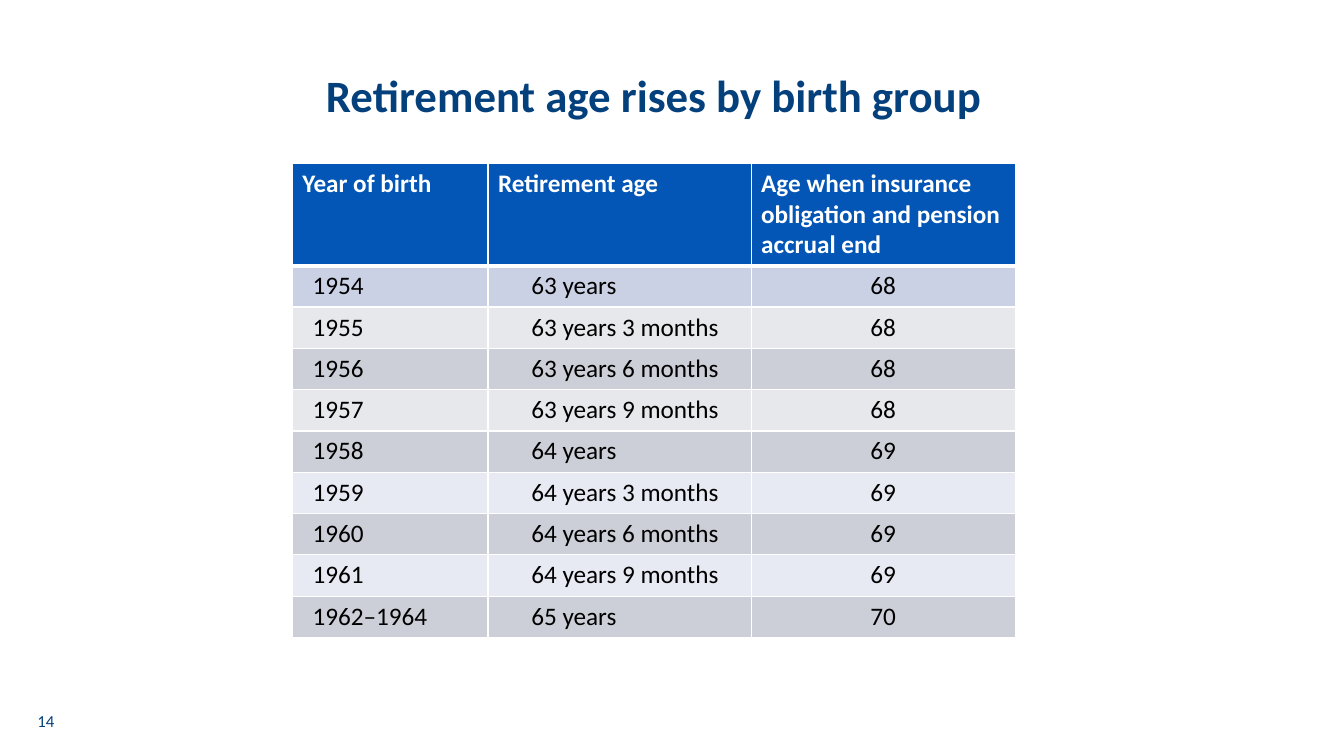
from lxml import etree
from pptx import Presentation
from pptx import util as u
from pptx.dml import color
from pptx.enum import text
from pptx.oxml import ns

COLORS = {
    "navy": "03407C", "header": "0356B5", "white": "FFFFFF", "black": "000000",
    "blue": "CBD1E5", "light": "E7E8EC", "gray": "CCCFD7", "pale": "E7E9F3",
}
LEFT, CENTER = text.PP_ALIGN.LEFT, text.PP_ALIGN.CENTER

HEADINGS = ["Year of birth", "Retirement age",
            "Age when insurance obligation and pension accrual end"]
BIRTH_GROUPS = [
    ("1954", "63 years", "68", "blue"),
    ("1955", "63 years 3 months", "68", "light"),
    ("1956", "63 years 6 months", "68", "gray"),
    ("1957", "63 years 9 months", "68", "light"),
    ("1958", "64 years", "69", "gray"),
    ("1959", "64 years 3 months", "69", "pale"),
    ("1960", "64 years 6 months", "69", "gray"),
    ("1961", "64 years 9 months", "69", "pale"),
    ("1962–1964", "65 years", "70", "gray"),
]
COLUMN_WIDTHS = [1.94, 2.61, 2.62]
# Left inset, right inset and alignment of each body column
BODY_LAYOUT = [(0.2, 0.1, LEFT), (0.43, 0.1, LEFT), (0.08, 0.08, CENTER)]
HEADER_LAYOUT = (0.1, 0.1, LEFT)


class SlideBuilder:
    font_name = "Calibri"

    def __init__(self, presentation):
        self.slide = presentation.slides.add_slide(presentation.slide_layouts[5])

    def set_text(self, frame, content, size, color_name, bold=False, align=CENTER):
        frame.word_wrap = True
        paragraph = frame.paragraphs[0]
        paragraph.text = content
        paragraph.alignment = align
        font = paragraph.font
        font.name, font.size, font.bold = self.font_name, u.Pt(size), bold
        font.color.rgb = color.RGBColor.from_string(COLORS[color_name])
        return paragraph

    def title(self, content, left, top, width, height):
        heading = self.slide.shapes.title
        heading.left, heading.top = u.Inches(left), u.Inches(top)
        heading.width, heading.height = u.Inches(width), u.Inches(height)
        frame = heading.text_frame
        frame.auto_size = text.MSO_AUTO_SIZE.NONE
        frame.vertical_anchor = text.MSO_ANCHOR.TOP
        self.set_text(frame, content, 32, "navy", bold=True).line_spacing = 0.9

    def label(self, content, left, top, width, height):
        box = self.slide.shapes.add_textbox(*map(u.Inches, (left, top, width, height)))
        box.text_frame.vertical_anchor = text.MSO_ANCHOR.MIDDLE
        self.set_text(box.text_frame, content, 12, "navy")

    def borders(self, cell, widths):
        properties = cell._tc.get_or_add_tcPr()
        for side, width in zip("LRTB", widths):
            line = etree.SubElement(properties, ns.qn(f"a:ln{side}"), w=str(u.Pt(width)))
            fill = etree.SubElement(line, ns.qn("a:solidFill"))
            etree.SubElement(fill, ns.qn("a:srgbClr"), val=COLORS["white"])

    def cell(self, cell, content, fill_name, layout, widths, header):
        inset_left, inset_right, align = layout
        self.borders(cell, widths)
        cell.fill.solid()
        cell.fill.fore_color.rgb = color.RGBColor.from_string(COLORS[fill_name])
        cell.margin_left, cell.margin_right = u.Inches(inset_left), u.Inches(inset_right)
        cell.margin_top = cell.margin_bottom = u.Inches(0.05)
        self.set_text(cell.text_frame, content, 18, "white" if header else "black",
                      bold=header, align=align)

    def table(self, rows, left, top, header_height, row_height):
        last_row, last_column = len(rows) - 1, len(COLUMN_WIDTHS) - 1
        height = header_height + last_row * row_height
        table = self.slide.shapes.add_table(
            len(rows), len(COLUMN_WIDTHS), u.Inches(left), u.Inches(top),
            u.Inches(sum(COLUMN_WIDTHS)), u.Inches(height)).table
        for column, width in zip(table.columns, COLUMN_WIDTHS):
            column.width = u.Inches(width)
        for r, (*contents, fill_name) in enumerate(rows):
            header = r == 0
            table.rows[r].height = u.Inches(header_height if header else row_height)
            for c, content in enumerate(contents):
                # Hairline outside, 1 pt inside, 3 pt below the header
                widths = (0.25 if c == 0 else 1, 0.25 if c == last_column else 1,
                          0.25 if header else 1,
                          3 if header else 0.25 if r == last_row else 1)
                layout = HEADER_LAYOUT if header else BODY_LAYOUT[c]
                self.cell(table.cell(r, c), content, fill_name, layout, widths, header)


def main():
    presentation = Presentation()
    presentation.slide_width, presentation.slide_height = u.Inches(13.33), u.Inches(7.5)
    builder = SlideBuilder(presentation)

    # Title
    builder.title("Retirement age rises by birth group", 0, 0.68, 12.97, 0.79)

    # Retirement age table
    builder.table([(*HEADINGS, "header"), *BIRTH_GROUPS], 2.9, 1.62, 1.0, 0.41)

    # Page number
    builder.label("14", 0.2, 6.95, 0.51, 0.4)

    presentation.save("out.pptx")


if __name__ == "__main__":
    main()
